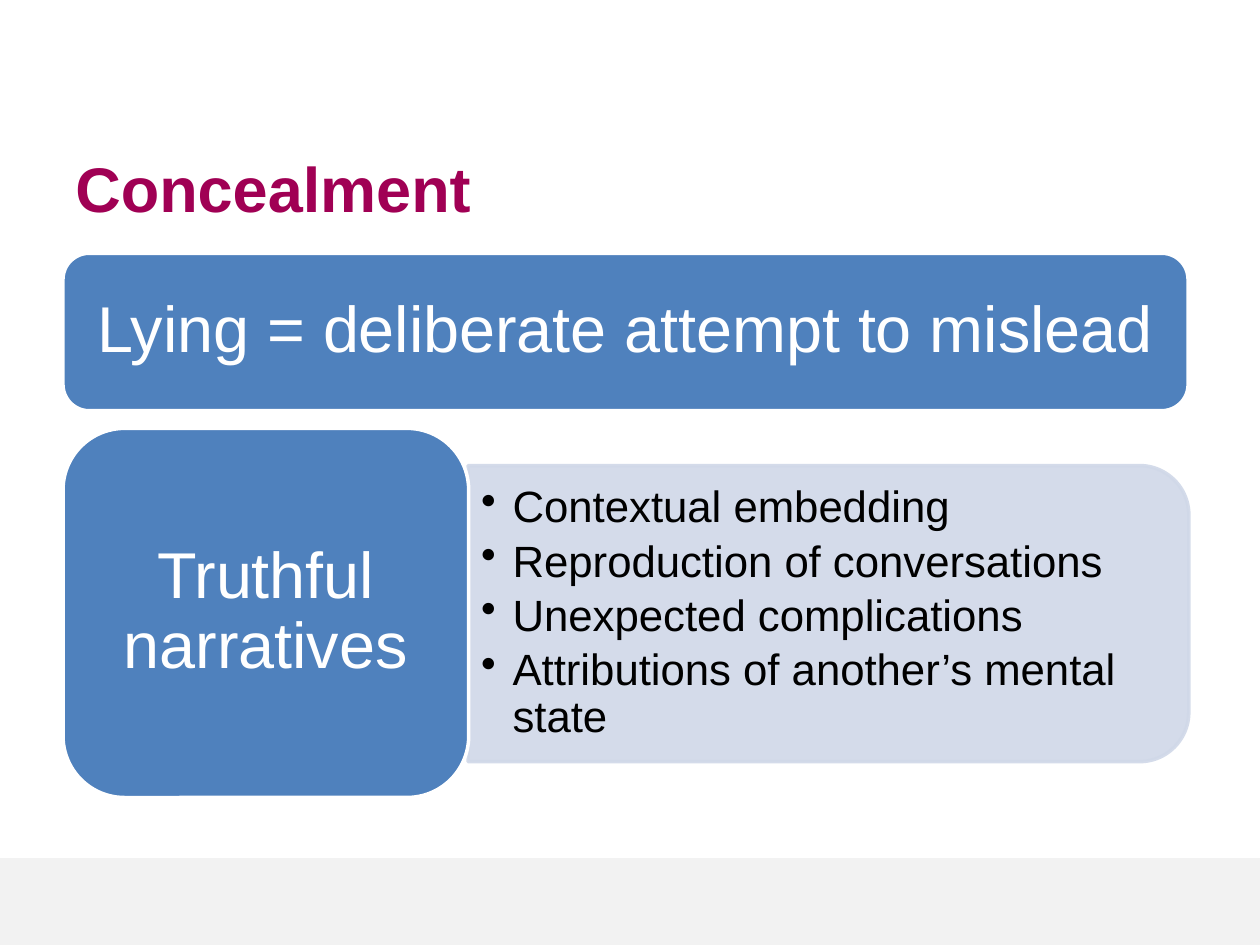
from lxml import etree
from pptx import Presentation
from pptx.dml.color import RGBColor
from pptx.enum.shapes import MSO_SHAPE
from pptx.enum.text import MSO_ANCHOR, PP_ALIGN
from pptx.oxml.ns import qn
from pptx.util import Inches, Pt

RECT = MSO_SHAPE.RECTANGLE
ROUND = MSO_SHAPE.ROUNDED_RECTANGLE
TAB = MSO_SHAPE.ROUND_2_SAME_RECTANGLE
MIDDLE = MSO_ANCHOR.MIDDLE
CENTER = PP_ALIGN.CENTER

WHITE = RGBColor(0xFF, 0xFF, 0xFF)
BLACK = RGBColor(0, 0, 0)
BLUE = RGBColor(0x4F, 0x81, 0xBD)
PALE = RGBColor(0xD0, 0xD8, 0xE8)
GREY = RGBColor(0xF2, 0xF2, 0xF2)
PLUM = RGBColor(0xA0, 0x00, 0x54)

TRAITS = [
    "Contextual embedding",
    "Reproduction of conversations",
    "Unexpected complications",
    "Attributions of another’s mental state",
]


def set_font(para, size, color, bold=False):
    for run in para.runs:
        font = run.font
        font.name = "Arial"
        font.size = Pt(size)
        font.bold = bold
        font.color.rgb = color


def set_frame(frame, side, edge):
    """Wrap and centre the text vertically, with the given insets."""
    frame.word_wrap = True
    frame.vertical_anchor = MIDDLE
    frame.margin_left = frame.margin_right = Inches(side)
    frame.margin_top = frame.margin_bottom = Inches(edge)


def add_block(slide, kind, box, fill, line=None):
    shape = slide.shapes.add_shape(kind, *map(Inches, box))
    shape.shadow.inherit = False
    shape.fill.solid()
    shape.fill.fore_color.rgb = fill
    if line is None:
        shape.line.fill.background()
    else:
        shape.line.color.rgb = line
        shape.line.width = Pt(2)
    return shape


def add_card(slide, box, text):
    card = add_block(slide, ROUND, box, BLUE, WHITE)
    set_frame(card.text_frame, 0.15, 0.08)
    card.text_frame.text = text
    para = card.text_frame.paragraphs[0]
    para.alignment = CENTER
    para.line_spacing = 0.9
    set_font(para, 37, WHITE)


def add_panel(slide, box):
    """Add a see-through panel, turned so that its right corners are round."""
    panel = add_block(slide, TAB, box, PALE, PALE)
    panel.rotation = 90
    for color in panel._element.spPr.iter(qn("a:srgbClr")):
        etree.SubElement(color, qn("a:alpha"), val="90000")


def add_title(slide, box, text):
    frame = slide.shapes.add_textbox(*map(Inches, box)).text_frame
    set_frame(frame, 0.1, 0.05)
    frame.text = text
    set_font(frame.paragraphs[0], 36, PLUM, bold=True)


def add_list(slide, box, items):
    frame = slide.shapes.add_textbox(*map(Inches, box)).text_frame
    set_frame(frame, 0.1, 0.05)
    frame.text = "\n".join(items)
    for para in frame.paragraphs:
        props = para._p.get_or_add_pPr()
        props.set("marL", str(Inches(0.25)))
        props.set("indent", str(Inches(-0.25)))
        etree.SubElement(props, qn("a:buChar"), char="•")
        para.line_spacing = 0.9
        para.space_after = Pt(4)
        set_font(para, 25, BLACK)


def main():
    deck = Presentation()
    deck.slide_width, deck.slide_height = Inches(10), Inches(7.5)
    slide = deck.slides.add_slide(deck.slide_layouts[6])
    add_block(slide, RECT, (0, 6.81, 10, 0.69), GREY)
    add_title(slide, (0.5, 1.12, 8.5, 0.74), "Concealment")
    add_card(slide, (0.5, 2.01, 8.93, 1.25),
             "Lying = deliberate attempt to mislead")
    add_panel(slide, (5.4, 2.01, 2.35, 5.72))
    add_list(slide, (3.72, 3.81, 5.6, 2.12), TRAITS)
    add_card(slide, (0.5, 3.4, 3.22, 2.93), "Truthful narratives")
    deck.save("out.pptx")


if __name__ == "__main__":
    main()
